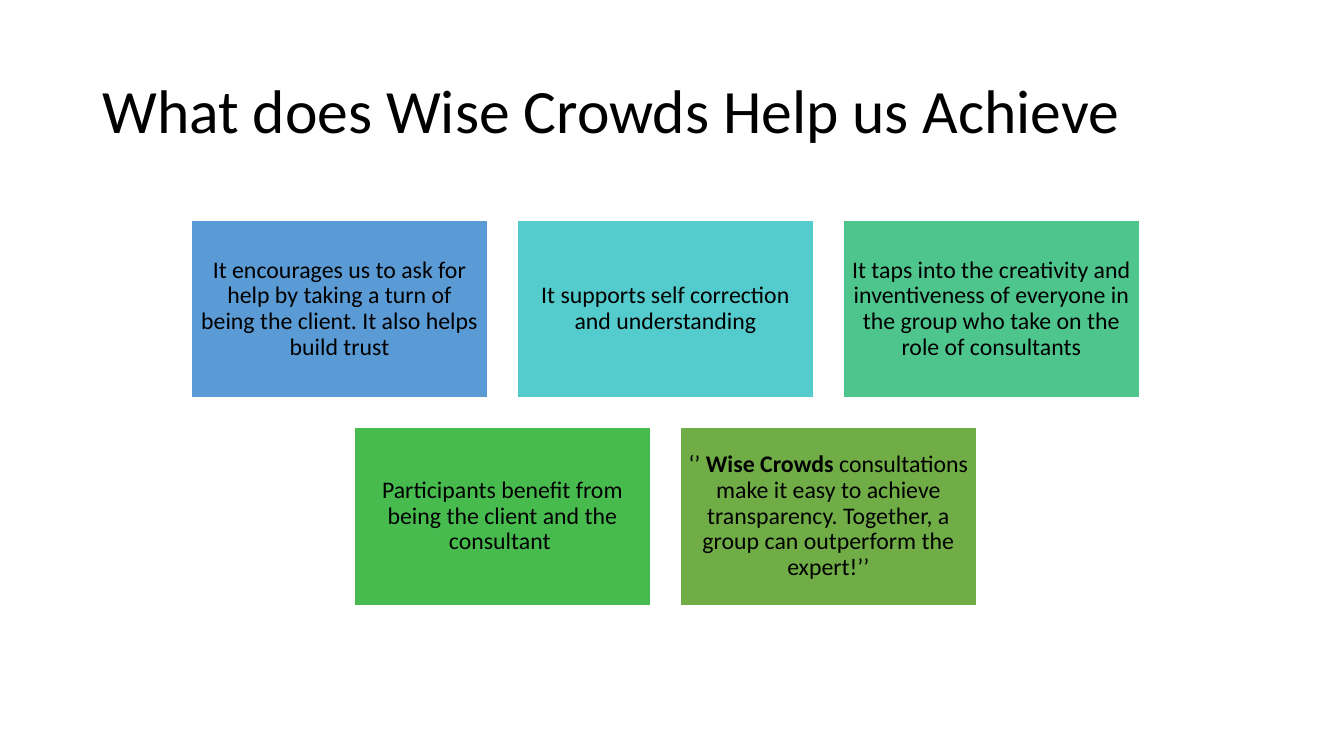
import pptx
import pptx.dml.color
import pptx.enum.shapes
import pptx.enum.text
import pptx.util
from dataclasses import dataclass

Pt = pptx.util.Pt
RGBColor = pptx.dml.color.RGBColor
PP_ALIGN = pptx.enum.text.PP_ALIGN


@dataclass(frozen=True)
class Theme:
    font: str = "Calibri"
    text: str = "000000"
    outline: str = "FFFFFF"
    title_size: float = 44
    card_size: float = 17
    line_spacing: float = 0.9


THEME = Theme()

# Card grid: each row is centred on the same axis
CARD_WIDTH, CARD_HEIGHT, CARD_GAP = 211.6, 127, 21.2
GRID_CENTER, GRID_TOP = 475.3, 157.2
CARD_INSET = 5.1

# Each card: fill colour, then its text as (words, bold) runs
CARD_ROWS = [
    [
        ("5B9BD5", [("It encourages us to ask for help by taking a turn of being "
                     "the client. It also helps build trust", False)]),
        ("54CCCD", [("It supports self correction and understanding", False)]),
        ("4DC58D", [("It taps into the creativity and inventiveness of everyone in "
                     "the group who take on the role of consultants", False)]),
    ],
    [
        ("48BB4F", [("Participants benefit from being the client and the consultant ",
                     False)]),
        ("70AD47", [("‘’", False), (" Wise Crowds", True),
                    (" consultations make it easy to achieve transparency. "
                     "Together, a group can outperform the expert!’’", False)]),
    ],
]


def apply_format(target, values):
    for name, value in values.items():
        setattr(target, name, value)


def write_text(shape, runs, size, alignment, inset_x, inset_y):
    """Fill a shape with one vertically centred paragraph."""
    frame = shape.text_frame
    apply_format(frame, {
        "word_wrap": True,
        "vertical_anchor": pptx.enum.text.MSO_ANCHOR.MIDDLE,
        "margin_left": Pt(inset_x), "margin_right": Pt(inset_x),
        "margin_top": Pt(inset_y), "margin_bottom": Pt(inset_y),
    })
    paragraph = frame.paragraphs[0]
    apply_format(paragraph, {"alignment": alignment,
                             "line_spacing": THEME.line_spacing})
    for words, bold in runs:
        run = paragraph.add_run()
        run.text = words
        apply_format(run.font, {"name": THEME.font, "size": Pt(size), "bold": bold})
        run.font.color.rgb = RGBColor.from_string(THEME.text)


def add_title(slide, words):
    box = slide.shapes.add_textbox(Pt(66), Pt(28.8), Pt(828), Pt(104.4))
    write_text(box, [(words, False)], THEME.title_size, PP_ALIGN.LEFT, 7.2, 3.6)


def add_card(slide, left, top, fill, runs):
    card = slide.shapes.add_shape(
        pptx.enum.shapes.MSO_SHAPE.RECTANGLE,
        Pt(left), Pt(top), Pt(CARD_WIDTH), Pt(CARD_HEIGHT))
    card.shadow.inherit = False
    card.fill.solid()
    card.fill.fore_color.rgb = RGBColor.from_string(fill)
    card.line.color.rgb = RGBColor.from_string(THEME.outline)
    card.line.width = Pt(1)
    write_text(card, runs, THEME.card_size, PP_ALIGN.CENTER, CARD_INSET, CARD_INSET)


def add_card_row(slide, top, cards):
    step = CARD_WIDTH + CARD_GAP
    left = GRID_CENTER - (len(cards) * step - CARD_GAP) / 2
    for column, (fill, runs) in enumerate(cards):
        add_card(slide, left + column * step, top, fill, runs)


def main():
    presentation = pptx.Presentation()
    apply_format(presentation, {"slide_width": Pt(960), "slide_height": Pt(540)})
    slide = presentation.slides.add_slide(presentation.slide_layouts[6])

    # Heading
    add_title(slide, "What does Wise Crowds Help us Achieve")

    # Benefit cards
    for row, cards in enumerate(CARD_ROWS):
        add_card_row(slide, GRID_TOP + row * (CARD_HEIGHT + CARD_GAP), cards)

    presentation.save("out.pptx")


if __name__ == "__main__":
    main()
